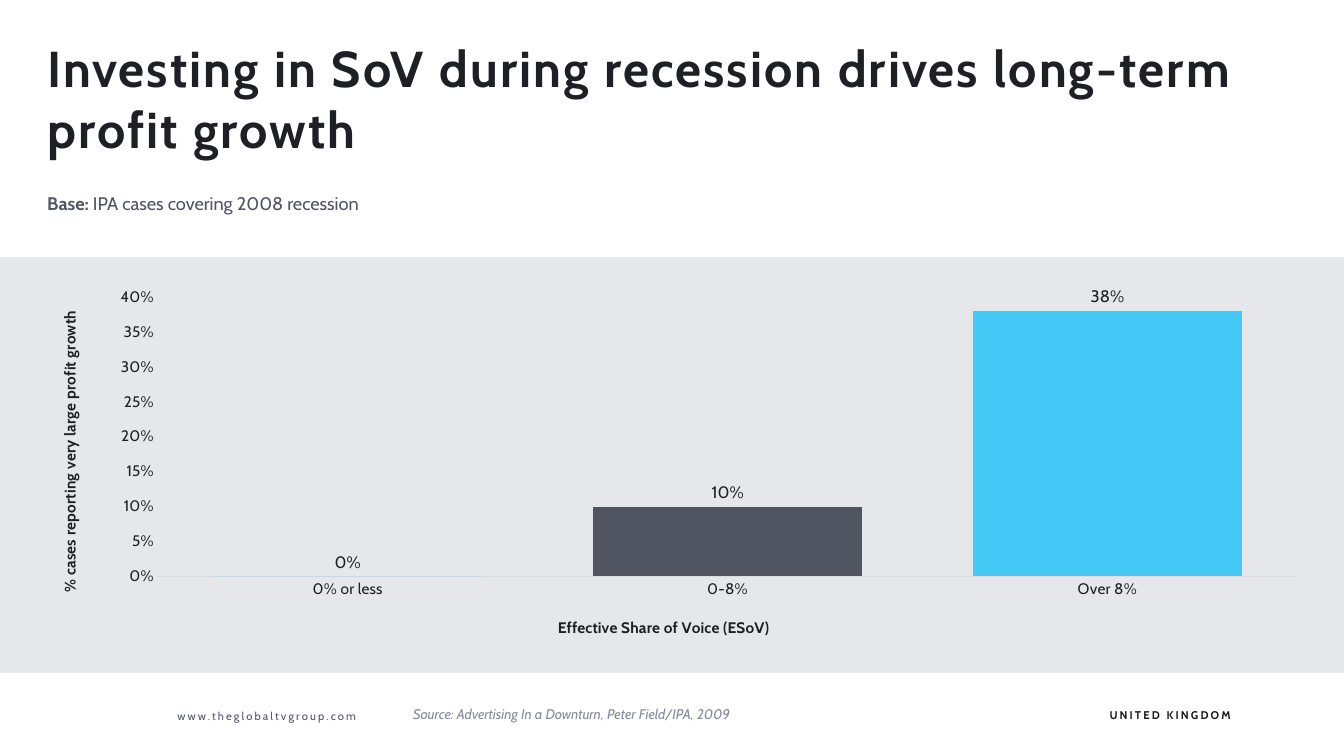
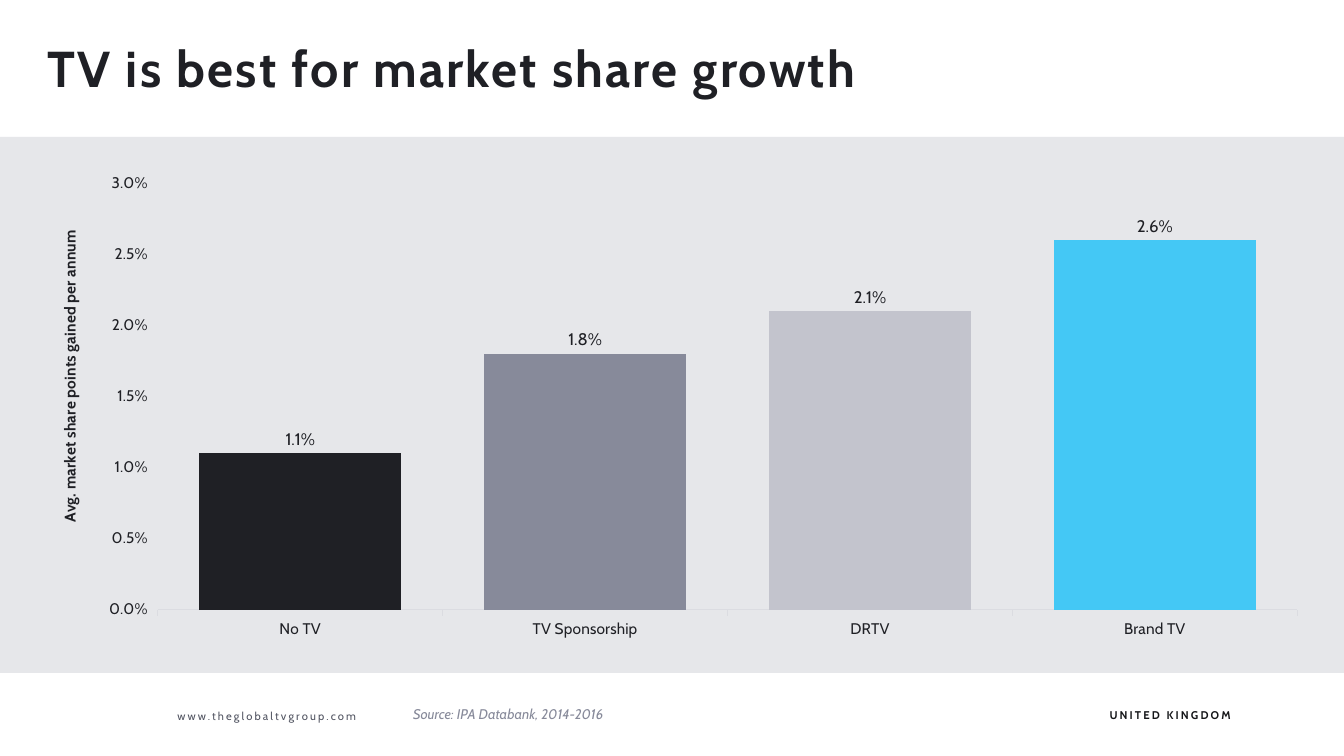
import pptx
import pptx.chart.data
import pptx.dml.color
import pptx.enum.chart
import pptx.enum.shapes
import pptx.enum.text
import pptx.oxml
import pptx.oxml.ns
import pptx.util
from collections import namedtuple
from dataclasses import dataclass

Cm = pptx.util.Cm
Anchor = pptx.enum.text.MSO_ANCHOR
Align = pptx.enum.text.PP_ALIGN
Tick = pptx.enum.chart.XL_TICK_MARK
Box = namedtuple("Box", "left top width height")  # centimetres


@dataclass(frozen=True)
class Theme:
    font: str = "Cabin"
    ink: str = "1F2025"
    near_black: str = "151619"
    slate: str = "515461"
    grey: str = "878A9A"
    silver: str = "C3C4CD"
    rule: str = "DBDCE1"
    band: str = "E6E7EA"
    accent: str = "44C8F5"
    title_size: int = 36
    base_size: int = 13
    label_size: int = 12
    axis_size: int = 11
    source_size: int = 10
    footer_size: int = 8


THEME = Theme()
PAGE = Box(0, 0, 33.87, 19.05)
MARGIN = 0.94
CONTENT_WIDTH = 31.98
BAND_BOTTOM = 16.96
TITLE = Box(MARGIN, 0.81, CONTENT_WIDTH, 1.85)
BASE = Box(MARGIN, 4.72, CONTENT_WIDTH, 0.84)
FOOTER = Box(4.22, 17.65, 27.05, 0.69)

TITLE_STYLE = dict(size=THEME.title_size, color=THEME.ink, bold=True)
BASE_STYLE = dict(size=THEME.base_size, color=THEME.slate, bold=False)
SITE_STYLE = dict(size=THEME.footer_size, color=THEME.slate)
COUNTRY_STYLE = dict(size=THEME.footer_size, color=THEME.near_black, bold=True)
SOURCE_STYLE = dict(size=THEME.source_size, color=THEME.grey, italic=True)
AXIS_STYLE = dict(size=THEME.axis_size, color=THEME.ink, bold=False)
AXIS_TITLE_STYLE = dict(AXIS_STYLE, bold=True)
LABEL_STYLE = dict(size=THEME.label_size, color=THEME.ink)

SLIDES = [
    dict(
        title="Investing in SoV during recession drives long-term profit growth",
        base=("Base: ", "IPA cases covering 2008 recession"),
        source="Source: Advertising In a Downturn, Peter Field/IPA, 2009",
        band_top=6.48,
        chart_insets=(0.63, 0.78),
        chart=dict(
            bars=[("0% or less", 0, THEME.accent), ("0-8%", 0.1, THEME.slate),
                  ("Over 8%", 0.38, THEME.accent)],
            number_format="0%", maximum=0.4, step=0.05, tick=Tick.NONE,
            plot_height=0.782,
            value_title=("% cases reporting very large profit growth", 0.015, 0.078),
            category_title=("Effective Share of Voice (ESoV)", 0.408, 0.93)),
    ),
    dict(
        title="TV is best for market share growth",
        source="Source: IPA Databank, 2014-2016",
        band_top=3.45,
        chart_insets=(0.66, 0.48),
        chart=dict(
            bars=[("No TV", 0.011, THEME.ink), ("TV Sponsorship", 0.018, THEME.grey),
                  ("DRTV", 0.021, THEME.silver), ("Brand TV", 0.026, THEME.accent)],
            number_format="0.0%", maximum=0.03, step=0.005, tick=Tick.OUTSIDE,
            plot_height=0.868,
            value_title=("Avg. market share points gained per annum", 0.015, 0.13)),
    ),
]


def rgb(value):
    return pptx.dml.color.RGBColor.from_string(value)


def set_attributes(target, values):
    for name, value in values.items():
        setattr(target, name, value)


def format_font(font, style):
    values = dict(style, name=THEME.font, size=pptx.util.Pt(style["size"]))
    font.color.rgb = rgb(values.pop("color"))
    set_attributes(font, values)


def place(shape, box):
    set_attributes(shape, {name: Cm(value) for name, value in box._asdict().items()})


def add_run(paragraph, text, style, spacing=0):
    """Append a run; spacing is the letter spacing in points."""
    run = paragraph.add_run()
    run.text = text
    format_font(run.font, style)
    if spacing:
        run._r.get_or_add_rPr().set("spc", str(int(spacing * 100)))


def add_text(slide, box, runs, anchor=Anchor.TOP, align=Align.LEFT, spacing=0):
    frame = slide.shapes.add_textbox(*map(Cm, box)).text_frame
    set_attributes(frame, dict(word_wrap=True, vertical_anchor=anchor))
    paragraph = frame.paragraphs[0]
    paragraph.alignment = align
    for text, style in runs:
        add_run(paragraph, text, style, spacing)


def fill_title(slide, box, text):
    title = slide.shapes.title
    place(title, box)
    set_attributes(title.text_frame, dict(
        word_wrap=True, vertical_anchor=Anchor.TOP,
        auto_size=pptx.enum.text.MSO_AUTO_SIZE.NONE))
    paragraph = title.text_frame.paragraphs[0]
    paragraph.alignment = Align.LEFT
    add_run(paragraph, text, TITLE_STYLE, 1.5)


def add_band(slide, box):
    band = slide.shapes.add_shape(pptx.enum.shapes.MSO_SHAPE.RECTANGLE, *map(Cm, box))
    band.shadow.inherit = False
    band.fill.solid()
    band.fill.fore_color.rgb = rgb(THEME.band)
    band.line.fill.background()


def add_footer(slide, box, source):
    small = dict(anchor=Anchor.MIDDLE, spacing=1.5)
    add_text(slide, Box(box.left, box.top + 0.08, 7.09, 0.61),
             [("www.theglobaltvgroup.com", SITE_STYLE)], **small)
    add_text(slide, Box(box.left + 5.94, box.top, 19.23, box.height),
             [(source, SOURCE_STYLE)])
    add_text(slide, Box(box.left + box.width - 7.32, box.top + 0.05, 7.32, 0.64),
             [("UNITED KINGDOM", COUNTRY_STYLE)], align=Align.RIGHT, **small)


def set_layout(element, index, **fractions):
    """Pin a chart part at fractions of the chart; index is its layout's place."""
    qn = pptx.oxml.ns.qn
    old = element.find(qn("c:layout"))
    if old is not None:
        element.remove(old)
    settings = dict(xMode="edge", yMode="edge", **fractions)
    if "w" in fractions:
        settings = dict(layoutTarget="inner", **settings)
    parts = "".join(f'<c:{name} val="{value}"/>' for name, value in settings.items())
    element.insert(index, pptx.oxml.parse_xml(
        f'<c:layout {pptx.oxml.ns.nsdecls("c")}>'
        f'<c:manualLayout>{parts}</c:manualLayout></c:layout>'))


def add_axis_title(axis, text, x, y, rotation=0):
    frame = axis.axis_title.text_frame
    add_run(frame.paragraphs[0], text, AXIS_TITLE_STYLE)
    set_attributes(frame, dict(word_wrap=False))
    body = frame._txBody.bodyPr
    body.set("rot", str(rotation * 60000))
    body.set("vert", "horz")
    set_layout(axis.axis_title._element, 1, x=x, y=y)


def format_axes(chart, number_format, maximum, step, tick):
    for axis in (chart.category_axis, chart.value_axis):
        set_attributes(axis, dict(has_major_gridlines=False, major_tick_mark=tick,
                                  minor_tick_mark=Tick.NONE))
        format_font(axis.tick_labels.font, AXIS_STYLE)
    line = chart.category_axis.format.line
    line.color.rgb = rgb(THEME.rule)
    line.width = pptx.util.Pt(0.75)
    values = chart.value_axis
    set_attributes(values, dict(minimum_scale=0, maximum_scale=maximum, major_unit=step))
    set_attributes(values.tick_labels, dict(number_format=number_format,
                                           number_format_is_linked=False))
    values.format.line.fill.background()


def format_bars(plot, colours, number_format):
    set_attributes(plot, dict(gap_width=41, overlap=-27, vary_by_categories=False,
                              has_data_labels=True))
    set_attributes(plot.data_labels, dict(
        show_value=True, number_format=number_format, number_format_is_linked=False,
        position=pptx.enum.chart.XL_LABEL_POSITION.OUTSIDE_END))
    format_font(plot.data_labels.font, LABEL_STYLE)
    series = plot.series[0]
    series.invert_if_negative = False
    for target, colour in [(series, THEME.accent)] + [
            (series.points[i], colour) for i, colour in enumerate(colours)]:
        target.format.fill.solid()
        target.format.fill.fore_color.rgb = rgb(colour)


def add_column_chart(slide, box, bars, number_format, maximum, step, tick,
                     plot_height, value_title, category_title=None):
    categories, values, colours = zip(*bars)
    data = pptx.chart.data.CategoryChartData(number_format=number_format)
    data.categories = categories
    data.add_series("Series 1", values)
    chart = slide.shapes.add_chart(
        pptx.enum.chart.XL_CHART_TYPE.COLUMN_CLUSTERED, *map(Cm, box), data).chart
    set_attributes(chart, dict(has_title=False, has_legend=False))
    format_font(chart.font, dict(size=THEME.source_size, color=THEME.ink))
    format_axes(chart, number_format, maximum, step, tick)
    format_bars(chart.plots[0], colours, number_format)
    add_axis_title(chart.value_axis, *value_title, rotation=-90)
    if category_title:
        add_axis_title(chart.category_axis, *category_title)
    set_layout(chart._chartSpace.chart.plotArea, 0,
               x=0.095, y=0.042, w=0.898, h=plot_height)


def add_chart_slide(deck, title, source, band_top, chart_insets, chart, base=None):
    slide = deck.slides.add_slide(deck.slide_layouts.get_by_name("Title Only"))
    band = Box(PAGE.left, band_top, PAGE.width, BAND_BOTTOM - band_top)
    above, below = chart_insets
    add_band(slide, band)
    fill_title(slide, TITLE, title)
    if base:
        label, description = base
        add_text(slide, BASE, [(label, dict(BASE_STYLE, bold=True)),
                               (description, BASE_STYLE)])
    add_column_chart(slide, Box(MARGIN, band.top + above, CONTENT_WIDTH,
                                band.height - above - below), **chart)
    add_footer(slide, FOOTER, source)


def main():
    deck = pptx.Presentation()
    set_attributes(deck, dict(slide_width=Cm(PAGE.width), slide_height=Cm(PAGE.height)))
    for content in SLIDES:
        add_chart_slide(deck, **content)
    deck.save("out.pptx")


if __name__ == "__main__":
    main()
